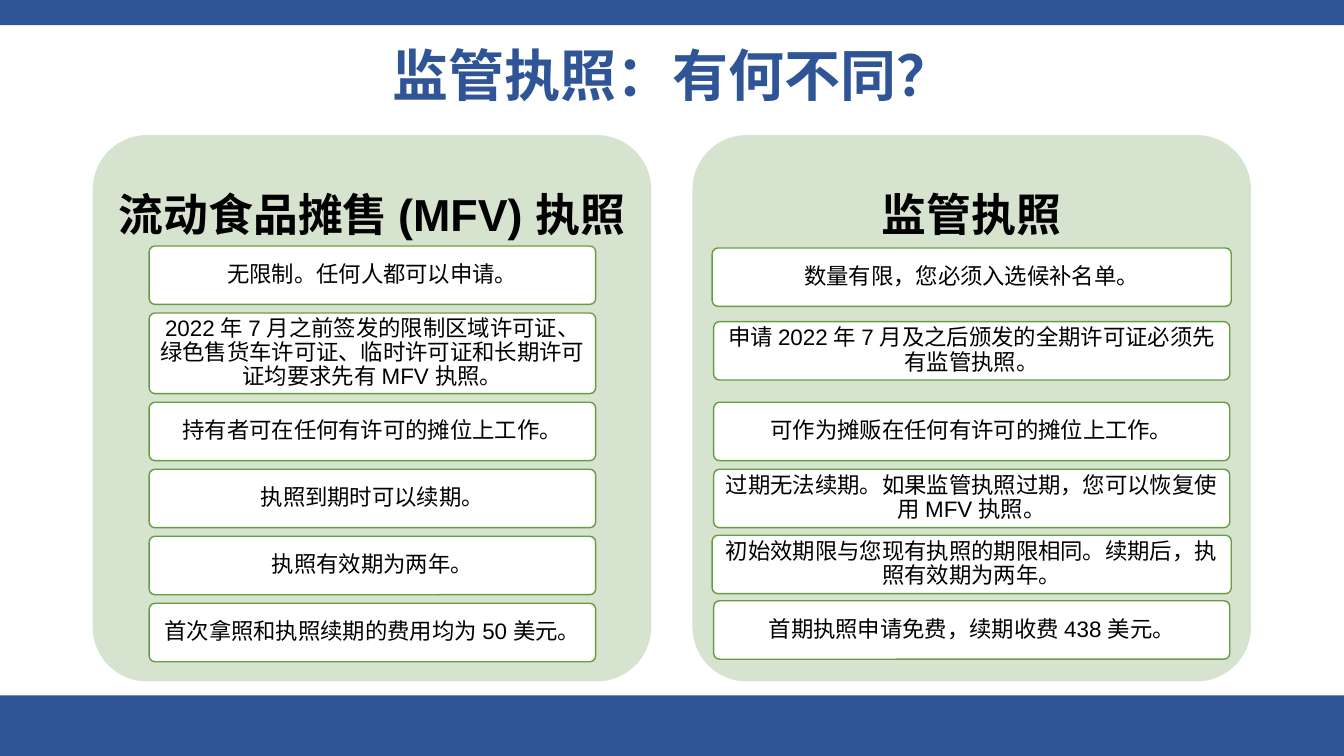
"""Builds a slide comparing the two kinds of street vending licence."""
from dataclasses import dataclass

from lxml.etree import SubElement
from pptx import Presentation
from pptx.dml.color import RGBColor
from pptx.enum.shapes import MSO_SHAPE as Shape
from pptx.enum.text import MSO_ANCHOR as Anchor, PP_ALIGN as Align
from pptx.oxml.ns import qn
from pptx.util import Inches, Pt

COLOURS = {"blue": "2F5597", "green": "D5E3CF", "edge": "669D40",
           "white": "FFFFFF", "black": "000000"}
CELL = Inches(0.1)
COLUMNS, ROWS = 133.33, 75
LATIN, HAN = "Arial", "Noto Sans CJK TC"


@dataclass(frozen=True)
class Area:
    column: float
    row: float
    columns: float
    rows: float

    def lengths(self) -> list[int]:
        return [round(CELL * size)
                for size in (self.column, self.row, self.columns, self.rows)]


@dataclass(frozen=True)
class Style:
    size: int
    font: str
    colour: str = "black"
    bold: bool = False


@dataclass(frozen=True)
class Card:
    text: str
    font: str = LATIN
    gap: float = 0.85
    rows: float = 5.8
    widen: float = 0


@dataclass(frozen=True)
class Panel:
    heading: str
    column: float
    card_column: float
    card_columns: float
    first_row: float
    cards: tuple[Card, ...]


BANDS = (Area(0, 0, COLUMNS, 2.5), Area(0, 69, COLUMNS, 6))
PANELS = (
    Panel("流动食品摊售 (MFV) 执照", 9.2, 14.8, 44.3, 24.4, (
        Card("无限制。任何人都可以申请。", gap=0),
        Card("2022 年 7 月之前签发的限制区域许可证、绿色售货车许可证、"
             "临时许可证和长期许可证均要求先有 MFV 执照。", rows=8),
        Card("持有者可在任何有许可的摊位上工作。", HAN),
        Card("执照到期时可以续期。", HAN),
        Card("执照有效期为两年。", HAN),
        Card("首次拿照和执照续期的费用均为 50 美元。"),
    )),
    Panel("监管执照", 68.7, 70.8, 51.2, 24.6, (
        Card("数量有限，您必须入选候补名单。", HAN, gap=0, widen=0.15),
        Card("申请 2022 年 7 月及之后颁发的全期许可证必须先有监管执照。", gap=1.5),
        Card("可作为摊贩在任何有许可的摊位上工作。", HAN, gap=2.2),
        Card("过期无法续期。如果监管执照过期，您可以恢复使用 MFV 执照。"),
        Card("初始效期限与您现有执照的期限相同。续期后，执照有效期为两年。",
             HAN, gap=0.75, widen=0.15),
        Card("首期执照申请免费，续期收费 438 美元。", gap=0.7),
    )),
)


def colour(name: str) -> RGBColor:
    return RGBColor.from_string(COLOURS[name])


def write(box, text: str, style: Style, margins: tuple[float, ...],
          wrap: bool = True) -> None:
    frame = box.text_frame
    frame.word_wrap = wrap
    frame.vertical_anchor = Anchor.MIDDLE
    (frame.margin_left, frame.margin_top,
     frame.margin_right, frame.margin_bottom) = map(Inches, margins)
    para = frame.paragraphs[0]
    para.text = text
    para.alignment = Align.CENTER
    para.line_spacing = 0.9
    para.font.size = Pt(style.size)
    para.font.bold = style.bold
    para.font.color.rgb = colour(style.colour)
    para.font.name = style.font
    defaults = para._p.pPr.find(qn("a:defRPr"))
    SubElement(defaults, qn("a:ea")).set("typeface", HAN)


def draw_block(page, area: Area, fill: str, radius: float = 0,
               edge: str | None = None):
    kind = Shape.ROUNDED_RECTANGLE if radius else Shape.RECTANGLE
    block = page.shapes.add_shape(kind, *area.lengths())
    block.shadow.inherit = False
    block.fill.solid()
    block.fill.fore_color.rgb = colour(fill)
    if radius:
        block.adjustments[0] = radius / min(area.rows, area.columns)
    if edge:
        block.line.color.rgb = colour(edge)
        block.line.width = Pt(1)
    else:
        block.line.fill.background()
    return block


def draw_panel(page, panel: Panel) -> None:
    back = draw_block(page, Area(panel.column, 13.4, 55.4, 54.2), "green", 5.4)
    write(back, panel.heading, Style(32, LATIN, bold=True), (0, 0, 0, 3.8), wrap=False)
    row = panel.first_row
    for card in panel.cards:
        row += card.gap
        area = Area(panel.card_column - card.widen, row,
                    panel.card_columns + 2 * card.widen, card.rows)
        box = draw_block(page, area, "white", 0.58, "edge")
        write(box, card.text, Style(16, card.font), (0.04, 0.03, 0.04, 0.03))
        row += card.rows


def main() -> None:
    deck = Presentation()
    deck.slide_width = round(CELL * COLUMNS)
    deck.slide_height = CELL * ROWS
    page = deck.slides.add_slide(deck.slide_layouts[6])
    for band in BANDS:
        draw_block(page, band, "blue")
    title = page.shapes.add_textbox(*Area(9.2, 4, 115, 7.5).lengths())
    write(title, "监管执照：有何不同？", Style(40, HAN, "blue", True), (0.1, 0.05, 0.1, 0.05))
    for panel in PANELS:
        draw_panel(page, panel)
    deck.save("out.pptx")


if __name__ == "__main__":
    main()
